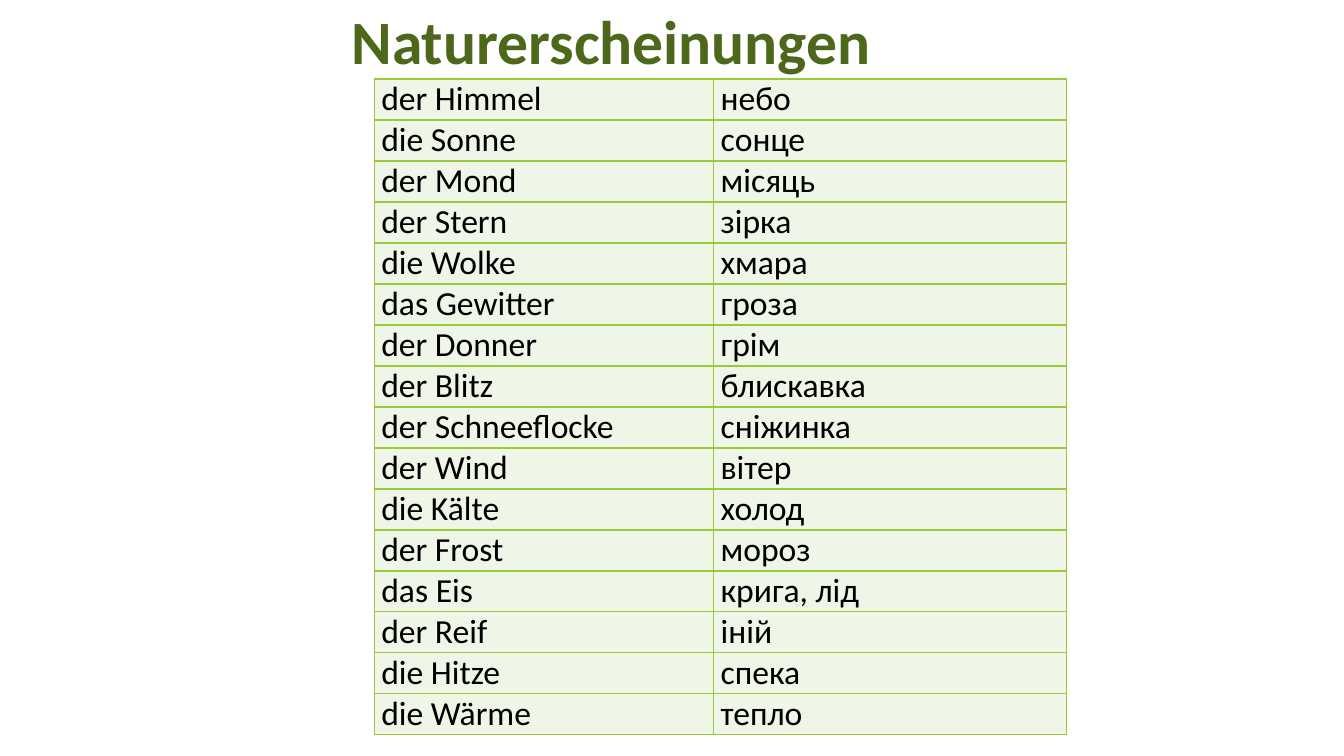
from dataclasses import dataclass

from lxml.etree import SubElement
from pptx import Presentation
from pptx.dml.color import RGBColor
from pptx.enum.text import MSO_ANCHOR, PP_ALIGN
from pptx.oxml.ns import qn
from pptx.util import Pt


@dataclass(frozen=True)
class Theme:
    font: str = "Calibri"
    title_size: int = 44
    cell_size: int = 24
    title: str = "4D671B"
    text: str = "000000"
    cell: str = "EFF6E8"
    border: str = "99CB38"


WORDS = [
    ("der Himmel", "небо"),
    ("die Sonne", "сонце"),
    ("der Mond", "місяць"),
    ("der Stern", "зірка"),
    ("die Wolke", "хмара"),
    ("das Gewitter", "гроза"),
    ("der Donner", "грім"),
    ("der Blitz", "блискавка"),
    ("der Schneeflocke", "сніжинка"),
    ("der Wind", "вітер"),
    ("die Kälte", "холод"),
    ("der Frost", "мороз"),
    ("das Eis", "крига, лід"),
    ("der Reif", "іній"),
    ("die Hitze", "спека"),
    ("die Wärme", "тепло"),
]


def set_formats(target, formats):
    for name, value in formats.items():
        setattr(target, name, value)


class Deck:
    def __init__(self, theme, width, height):
        self.theme = theme
        self.prs = Presentation()
        set_formats(self.prs, {"slide_width": Pt(width), "slide_height": Pt(height)})
        self.s = self.prs.slides.add_slide(self.prs.slide_layouts[6])

    def add_text(self, p, text, size, color, bold=False):
        r = p.add_run()
        r.text = text
        set_formats(r.font, {"name": self.theme.font, "size": Pt(size), "bold": bold})
        r.font.color.rgb = RGBColor.from_string(color)

    def title(self, text, x, y, w, h):
        tf = self.s.shapes.add_textbox(Pt(x), Pt(y), Pt(w), Pt(h)).text_frame
        set_formats(tf, {"word_wrap": True, "vertical_anchor": MSO_ANCHOR.MIDDLE})
        p = tf.paragraphs[0]
        p.line_spacing = 0.9
        self.add_text(p, text, self.theme.title_size, self.theme.title, True)

    def borders(self, cell):
        tcPr = cell._tc.get_or_add_tcPr()
        for side in ("a:lnL", "a:lnR", "a:lnT", "a:lnB"):
            ln = SubElement(tcPr, qn(side), w=str(Pt(1)))
            fill = SubElement(ln, qn("a:solidFill"))
            SubElement(fill, qn("a:srgbClr"), val=self.theme.border)

    def table(self, rows, x, y, widths, row_height):
        shape = self.s.shapes.add_table(
            len(rows), len(widths), Pt(x), Pt(y),
            Pt(sum(widths)), Pt(row_height * len(rows)))
        table = shape.table
        set_formats(table, {"first_row": False, "horz_banding": False})
        for column, width in zip(table.columns, widths):
            column.width = Pt(width)
        for row, words in zip(table.rows, rows):
            row.height = Pt(row_height)
            for cell, word in zip(row.cells, words):
                self.cell(cell, word)

    def cell(self, cell, word):
        set_formats(cell, {"margin_left": Pt(5), "margin_right": Pt(5),
                           "margin_top": 0, "margin_bottom": 0})
        self.borders(cell)
        cell.fill.solid()
        cell.fill.fore_color.rgb = RGBColor.from_string(self.theme.cell)
        p = cell.text_frame.paragraphs[0]
        p.alignment = PP_ALIGN.LEFT
        self.add_text(p, word, self.theme.cell_size, self.theme.text)


def main():
    deck = Deck(Theme(), 960, 540)
    deck.title("Naturerscheinungen", 244, 0, 653, 64)
    deck.table(WORDS, 267.4, 56.4, (242.4, 252), 29.3)
    deck.prs.save("out.pptx")


if __name__ == "__main__":
    main()
